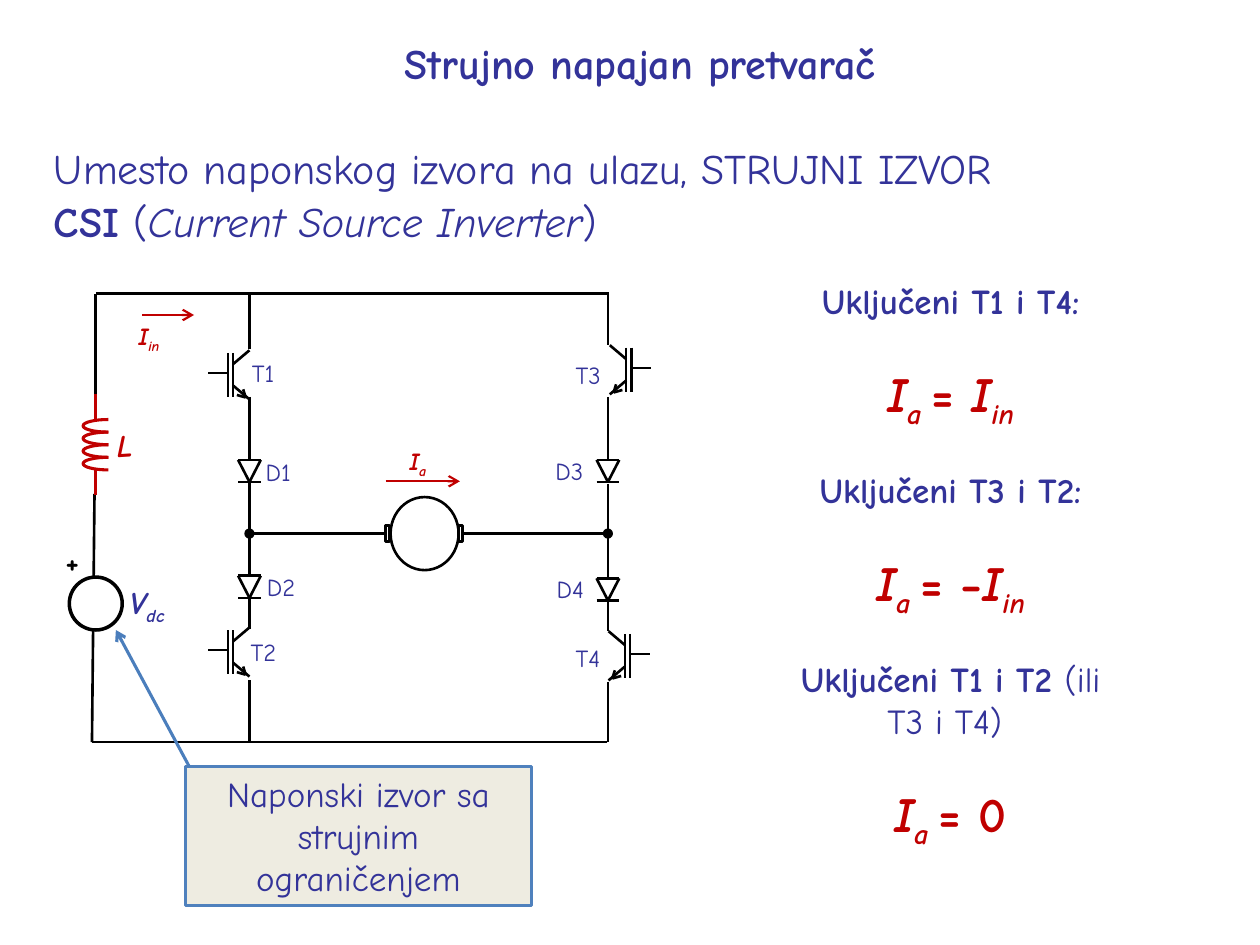
from math import cos, pi, sin

from lxml import etree
from pptx import Presentation
from pptx.dml.color import RGBColor
from pptx.enum.shapes import MSO_CONNECTOR, MSO_SHAPE
from pptx.enum.text import MSO_ANCHOR, PP_ALIGN
from pptx.oxml.ns import qn
from pptx.util import Inches, Pt

STRAIGHT = MSO_CONNECTOR.STRAIGHT
OVAL, RECT = MSO_SHAPE.OVAL, MSO_SHAPE.RECTANGLE
LEFT, CENTER, TOP = PP_ALIGN.LEFT, PP_ALIGN.CENTER, MSO_ANCHOR.TOP
FONT = "Comic Neue"
BLUE, RED, BLACK, WHITE = "333399", "C00000", "000000", "FFFFFF"
SAND, EDGE, ARROW = "EEECE1", "4F81BD", "4B7EBC"
COLS, ROWS = 100, 75


def paint(text):
    return RGBColor.from_string(text)


class Board:
    """Draws on one slide; lengths are columns and rows of a 100 by 75 grid."""

    def __init__(self, deck):
        self.slide = deck.slides.add_slide(deck.slide_layouts[6])
        self.shapes = self.slide.shapes
        self.col = deck.slide_width / COLS
        self.row = deck.slide_height / ROWS

    def spot(self, x, y):
        return round(x * self.col), round(y * self.row)

    def line(self, start, end, color=BLACK, width=1.5, arrow=False):
        link = self.shapes.add_connector(STRAIGHT, *self.spot(*start), *self.spot(*end))
        link.line.color.rgb = paint(color)
        link.line.width = Pt(width)
        props = link._element.spPr
        if arrow:
            etree.SubElement(props.find(qn("a:ln")), qn("a:tailEnd"), type="arrow")
        etree.SubElement(props, qn("a:effectLst"))
        return link

    def shape(self, kind, x, y, w, h, fill=WHITE, color=BLACK, width=1.5):
        item = self.shapes.add_shape(kind, *self.spot(x, y), *self.spot(w, h))
        item.shadow.inherit = False
        item.fill.solid()
        item.fill.fore_color.rgb = paint(fill)
        item.line.color.rgb = paint(color)
        item.line.width = Pt(width)
        return item

    def curve(self, points, color, width):
        start, *rest = [self.spot(*p) for p in points]
        pen = self.shapes.build_freeform(*start)
        pen.add_line_segments(rest, close=False)
        item = pen.convert_to_shape()
        item.shadow.inherit = False
        item.fill.background()
        item.line.color.rgb = paint(color)
        item.line.width = Pt(width)

    def put(self, item, paras, align):
        """Fill with (size, color, gap before, runs); run marks: b bold, i italic, s subscript."""
        frame = item.text_frame
        frame.word_wrap = True
        frame.vertical_anchor = TOP
        for n, (size, color, gap, runs) in enumerate(paras):
            para = frame.add_paragraph() if n else frame.paragraphs[0]
            para.alignment = align
            para.space_before = Pt(gap)
            for text, marks in runs:
                run = para.add_run()
                run.text = text
                font = run.font
                font.name, font.size = FONT, Pt(size)
                font.color.rgb = paint(color)
                font.bold, font.italic = "b" in marks, "i" in marks
                if "s" in marks:
                    run._r.get_or_add_rPr().set("baseline", "-25000")

    def text(self, x, y, w, h, paras, align=LEFT):
        box = self.shapes.add_textbox(*self.spot(x, y), *self.spot(w, h))
        self.put(box, paras, align)

    def label(self, x, y, *runs, size=14, color=BLUE):
        self.text(x, y, 7, 4.1, [(size, color, 0, runs)])

    def gate(self, x, y, side):
        """Transistor with its collector at x, y; side is -1 or 1, where the gate points."""
        parts = [(1.3, 0.2, 1.3, 3.7), (1.7, 0.2, 1.7, 3.7), (0, 0, 1.3, 1.1),
                 (0, 3.9, 1.3, 2.8), (1.7, 1.8, 3.3, 1.8),
                 (0.5, 3.1, 0.3, 3.75), (1, 3.55, 0.3, 3.75)]
        for a, b, c, d in parts:
            self.line((x + side * a, y + b), (x + side * c, y + d))

    def diode(self, x, y):
        left, right, base = x - 0.9, x + 0.9, y + 1.75
        for a, b in (((left, y), (right, y)), ((right, y), (x, base)),
                     ((left, y), (x, base)), ((left, base), (right, base))):
            self.line(a, b)

    def coil(self, x, y, turns):
        for n in range(turns):
            steps = [pi * k / 16 for k in range(17)]
            self.curve([(x - 2 * sin(t), y + n + 0.5 - 0.5 * cos(t)) for t in steps], RED, 1.75)


def circuit(board):
    near, far, mid = 19.8, 48.25, 42.35
    wires = [((48.3, 23.3), (7.6, 23.3)), ((48.2, 58.9), (7.3, 58.9)),
             ((7.6, 23.3), (7.6, 31.3)), ((7.5, 39.2), (7.3, 58.9))]
    for x, spans in (
        (near, ((23.3, 27.7), (31.5, 36.6), (38.2, 45.7), (47.4, 49.9), (54, 58.9))),
        (far, ((23.3, 27.4), (31.5, 36.6), (38.4, 45.9), (47.6, 50.1), (54.1, 58.9))),
    ):
        wires += [((x, a), (x, b)) for a, b in spans]
    for start, end in wires:
        board.line(start, end)

    board.shape(OVAL, 31, 39.45, 5.4, 5.8)
    for x, node, side in ((30.6, near, 1), (36.4, far, 3)):
        brush = board.shape(RECT, x, mid - 0.65, 0.3, 1.3)
        board.line((node, mid), (x, mid)).end_connect(brush, side)
        board.shape(OVAL, node - 0.3, mid - 0.3, 0.6, 0.6, BLACK)
    board.shape(OVAL, 5.5, 45.8, 4.2, 4.2, width=2)

    for x, y, side in ((19.8, 27.8, -1), (19.8, 49.8, -1), (48.4, 27.4, 1), (48.3, 50.1, 1)):
        board.gate(x, y, side)
    for x, y in ((near, 36.5), (near, 45.7), (far, 36.5), (far, 45.9)):
        board.diode(x, y)
    board.coil(8.6, 33.3, 4)
    for y in (31.3, 37.3):
        board.line((7.6, y), (7.6, y + 2), RED, 1.75)
    for start, end in (((30.6, 38.2), (36.5, 38.2)), ((11.3, 25), (15.4, 25))):
        board.line(start, end, RED, 1.25, True)

    for name, x, y in (("T1", 19, 27.9), ("T2", 18.9, 50.1), ("T3", 44.7, 28.1),
                       ("T4", 44.7, 50.5), ("D1", 20.1, 35.8), ("D2", 20.2, 44.9),
                       ("D3", 43.1, 35.7), ("D4", 43.2, 45.1)):
        board.label(x, y, (name, ""))
    board.label(31.5, 34.9, ("I", "bi"), ("a", "bis"), color=RED)
    board.label(10, 25, ("I", "bi"), ("in", "bis"), color=RED)
    board.label(8.3, 33.3, ("L", "bi"), size=18, color=RED)
    board.label(9.3, 45.8, ("V", "bi"), ("dc", "bis"), size=18)
    board.label(4.2, 42.5, ("+", "b"), size=18, color=BLACK)


def main():
    deck = Presentation()
    deck.slide_width, deck.slide_height = Inches(10), Inches(7.5)
    board = Board(deck)

    board.text(28.3, 2.5, 45, 5, [(24, BLUE, 0, [("Strujno napajan pretvarač", "b")])], CENTER)
    lead = [("Umesto naponskog izvora na ulazu, STRUJNI IZVOR", "")]
    board.text(3.3, 10.8, 84.8, 5, [(24, BLUE, 0, lead)])
    term = [("CSI", "b"), (" (", ""), ("Current Source Inverter", "i"), (")", "")]
    board.text(3.3, 15, 50.7, 5, [(24, BLUE, 0, term)])

    circuit(board)

    armature = [("I", "bi"), ("a ", "bis")]
    source = [("I", "bi"), ("in", "bis")]
    states = [
        (21.7, 12.5, [("Uključeni T1 i T4:", "b")], [("= ", "b")] + source),
        (36.7, 12.5, [("Uključeni T3 i T2:", "b")], [("= −", "b")] + source),
        (51.7, 15.8, [("Uključeni T1 i T2 ", "b"), ("(ili T3 i T4) ", "")], [("= 0", "b")]),
    ]
    for y, h, head, value in states:
        paras = [(20, BLUE, 0, head), (28, RED, 24, armature + value)]
        board.text(61.7, y, 27.5, h, paras, CENTER)

    note = board.shape(RECT, 14.7, 60.8, 27.5, 11.1, SAND, EDGE, 1.75)
    board.put(note, [(20, BLUE, 0, [("Naponski izvor sa strujnim ograničenjem", "")])], CENTER)
    board.line((15, 60.8), (9.2, 50), ARROW, 1.75, True)

    deck.save("out.pptx")


if __name__ == "__main__":
    main()
